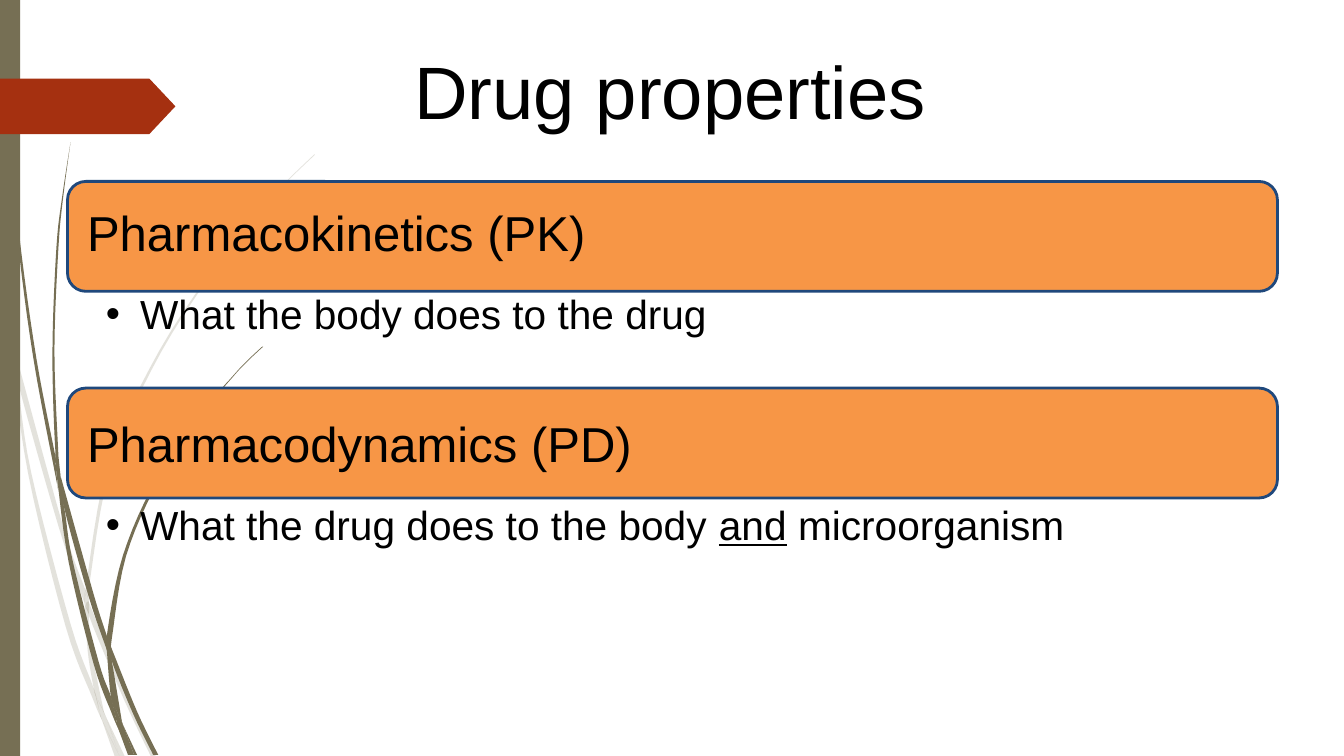
from pptx import Presentation
from pptx.dml.color import RGBColor
from pptx.enum.shapes import MSO_SHAPE
from pptx.enum.text import MSO_ANCHOR, PP_ALIGN
from pptx.oxml.ns import qn
from pptx.util import Pt
from lxml import etree

PX = 9144  # 100 px to the inch
OLIVE = RGBColor(0x76, 0x6F, 0x54)
RUST = RGBColor(0xA5, 0x30, 0x10)
ORANGE = RGBColor(0xF7, 0x96, 0x46)
NAVY = RGBColor(0x1F, 0x48, 0x7C)
BLACK = RGBColor(0, 0, 0)
RECT, ROUND, ARROW = MSO_SHAPE.RECTANGLE, MSO_SHAPE.ROUNDED_RECTANGLE, MSO_SHAPE.PENTAGON
TOP, MIDDLE, LEFT = MSO_ANCHOR.TOP, MSO_ANCHOR.MIDDLE, PP_ALIGN.LEFT

deck = Presentation()
deck.slide_width, deck.slide_height = 1333 * PX, 750 * PX
slide = deck.slides.add_slide(deck.slide_layouts[6])
shapes = slide.shapes


def smooth(edge, steps=6):
    """Points in EMU on a soft curve through all points of an edge."""
    pts = [edge[0], *edge, edge[-1]]
    curve = []
    for a, b, c, d in zip(pts, pts[1:], pts[2:], pts[3:]):
        for i in range(steps):
            t = i / steps
            curve.append(tuple(
                PX * (q + t * (r - p) / 2 + t * t * (p - 2.5 * q + 2 * r - s / 2)
                      + t ** 3 * (1.5 * (q - r) + (s - p) / 2))
                for p, q, r, s in zip(a, b, c, d)))
    return curve + [(edge[-1][0] * PX, edge[-1][1] * PX)]


def write(shape, size, parts, inset, anchor):
    """Fill a shape with one left-aligned line of (text, underline) parts."""
    frame = shape.text_frame
    style = {"word_wrap": True, "vertical_anchor": anchor, "margin_left": inset[0] * PX,
             "margin_top": inset[1] * PX, "margin_right": 0, "margin_bottom": inset[2] * PX}
    for key, value in style.items():
        setattr(frame, key, value)
    line = frame.paragraphs[0]
    line.alignment = LEFT
    for text, under in parts:
        run = line.add_run()
        run.text = text
        run.font.color.rgb = BLACK
        for key, value in {"name": "Arial", "size": Pt(size), "underline": under}.items():
            setattr(run.font, key, value)
    return line


# Grass pieces: left edge downwards, right edge upwards
pale = [
    ([(0, 282), (0, 299), (10, 344), (11, 350)], [(11, 350), (9, 322), (0, 282)]),
    ([(14, 345), (17, 376), (58, 522), (84, 599)], [(85, 586), (62, 520), (14, 345)]),
    ([(88, 596), (88, 610), (123, 694), (150, 751)],
     [(155, 751), (127, 692), (92, 607), (88, 596)]),
    ([(105, 711), (119, 751)], [(124, 751), (105, 711)]),
    ([(11, 350), (28, 470), (65, 621), (92, 693), (101, 714)],
     [(99, 707), (93, 683), (70, 619), (31, 469), (17, 376), (11, 350)]),
    ([(84, 599), (87, 646), (93, 683), (96, 692), (105, 711)],
     [(103, 706), (91, 646), (88, 610), (88, 608), (84, 599)]),
    ([(312, 153), (289, 175), (268, 197), (228, 244), (158, 348), (107, 461), (85, 584),
      (85, 586), (88, 596)],
     [(88, 584), (110, 462), (160, 349), (229, 245), (268, 198), (290, 175), (312, 154)]),
    ([(101, 714), (114, 751)], [(119, 751), (101, 714)]),
    ([(85, 586), (84, 599), (88, 608)], [(88, 610), (88, 596), (85, 586)]),
    ([(93, 683), (99, 707), (101, 714), (119, 751)], [(119, 751), (105, 711), (96, 692), (93, 683)]),
]
dark = [
    ([(3, 0), (4, 48), (7, 110), (17, 233), (33, 355), (56, 477), (57, 481)],
     [(55, 457), (55, 453), (36, 355), (19, 232), (8, 109), (5, 48), (4, 0)]),
    ([(60, 472), (64, 505), (88, 592), (106, 645)], [(106, 633), (106, 631), (93, 590), (60, 472)]),
    ([(110, 641), (111, 656), (132, 708), (152, 749)],
     [(157, 749), (136, 706), (113, 649), (110, 641)]),
    ([(57, 477), (68, 557), (93, 659), (111, 708), (117, 722)],
     [(116, 717), (110, 691), (98, 657), (72, 556), (64, 505), (57, 477)]),
    ([(70, 141), (62, 193), (56, 245), (52, 349), (55, 449), (60, 472)],
     [(58, 453), (54, 349), (58, 245), (63, 193), (70, 141)]),
    ([(122, 719), (133, 749)], [(136, 749), (122, 719)]),
    ([(55, 449), (55, 453), (57, 477), (64, 505)], [(64, 505), (60, 472), (55, 449)]),
    ([(260, 344), (245, 358), (231, 373), (204, 405), (156, 474), (122, 551), (106, 631),
      (110, 641)],
     [(111, 633), (125, 552), (158, 476), (205, 406), (231, 374), (245, 359), (261, 344)]),
    ([(117, 722), (127, 749)], [(131, 749), (117, 722)]),
    ([(106, 645), (110, 691), (116, 706), (122, 719)],
     [(121, 716), (111, 656), (109, 651), (106, 645)]),
    ([(106, 631), (106, 645), (111, 656)], [(110, 641), (106, 631)]),
    ([(110, 691), (116, 717), (117, 722), (130, 749)],
     [(133, 749), (122, 719), (116, 706), (110, 691)]),
]
for alpha, pieces in [(20, pale), (100, dark)]:
    for left, right in pieces:
        points = smooth(left) + smooth(right)
        pen = shapes.build_freeform(*points[0], scale=1.0)
        pen.add_line_segments(points[1:], close=True)
        piece = pen.convert_to_shape()
        piece.shadow.inherit = False
        piece.fill.solid()
        piece.fill.fore_color.rgb = OLIVE
        piece.line.fill.background()
        if alpha < 100:
            tint = piece._element.spPr.find(qn("a:solidFill"))[0]
            etree.SubElement(tint, qn("a:alpha")).set("val", str(alpha * 1000))

# Side bar and arrow tab
for kind, color, box in [(RECT, OLIVE, (0, 0, 20, 750)), (ARROW, RUST, (0, 78, 174, 55))]:
    part = shapes.add_shape(kind, *(n * PX for n in box))
    part.shadow.inherit = False
    part.fill.solid()
    part.fill.fore_color.rgb = color
    part.line.fill.background()
    if kind == ARROW:
        part.adjustments[0] = 0.47

# Title
title = shapes.add_textbox(410 * PX, 43 * PX, 514 * PX, 93 * PX)
write(title, 53, [("Drug properties", False)], (1, 2, 0), TOP)

# Topics: bar top, space below heading, heading, bullet top, bullet parts
topics = [
    (180, 8, "Pharmacokinetics (PK)", 287, [("What the body does to the drug", False)]),
    (385, 0, "Pharmacodynamics (PD)", 496,
     [("What the drug does to the body ", False), ("and", True), (" microorganism", False)]),
]
for top, lift, head, low, parts in topics:
    bar = shapes.add_shape(ROUND, 67 * PX, top * PX, 1200 * PX, 109 * PX)
    bar.shadow.inherit = False
    bar.fill.solid()
    bar.fill.fore_color.rgb = ORANGE
    bar.line.color.rgb = NAVY
    bar.line.width = Pt(2)
    write(bar, 35, [(head, False)], (14, 0, lift), MIDDLE)

    note = shapes.add_textbox(85 * PX, low * PX, 982 * PX, 46 * PX)
    props = write(note, 29, parts, (0, 0, 0), TOP)._p.get_or_add_pPr()
    props.set("marL", str(54 * PX))
    props.set("indent", str(-34 * PX))
    etree.SubElement(props, qn("a:buFont")).set("typeface", "Arial")
    etree.SubElement(props, qn("a:buChar")).set("char", "•")

deck.save("out.pptx")
